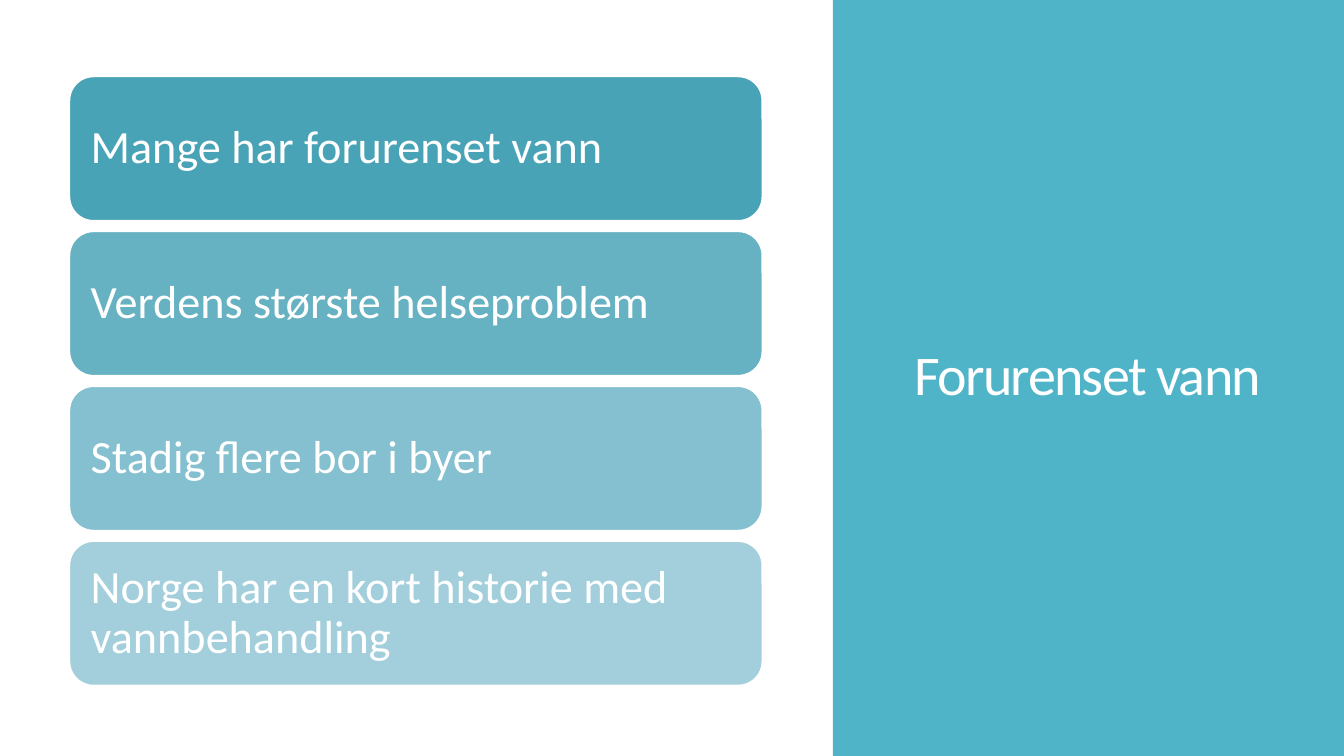
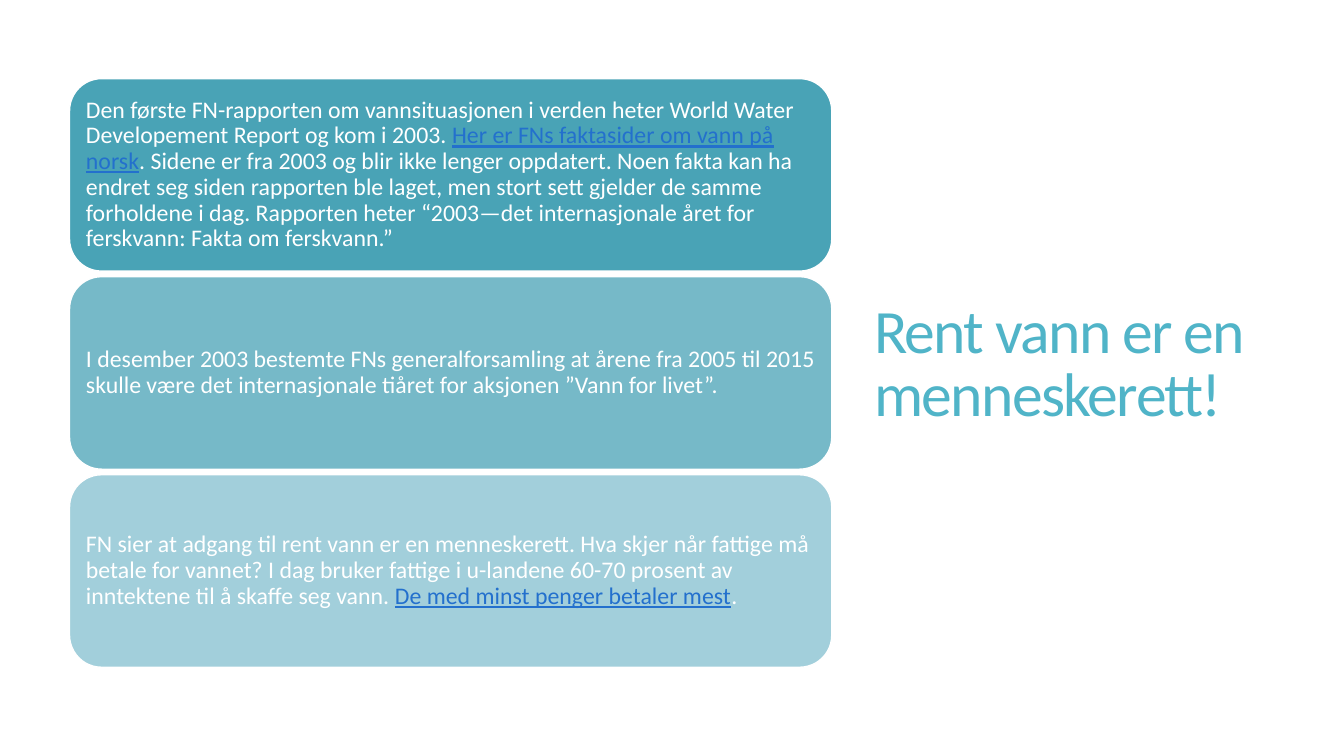
"""Build two slides about clean water, each with a stack of cards and a side title."""
from dataclasses import dataclass

import pptx
import pptx.dml.color
import pptx.enum.shapes
import pptx.enum.text
import pptx.presentation
import pptx.shapes.autoshape
import pptx.slide
import pptx.text.text
import pptx.util

Inches = pptx.util.Inches
RGBColor = pptx.dml.color.RGBColor
MSO_SHAPE = pptx.enum.shapes.MSO_SHAPE

FONT = "Calibri"
WHITE = RGBColor(0xFF, 0xFF, 0xFF)
TEAL = RGBColor(0x50, 0xB4, 0xC8)
CARD_DARK = RGBColor(0x49, 0xA3, 0xB6)
CARD_LIGHT = RGBColor(0xA2, 0xCF, 0xDB)
LINK_BLUE = RGBColor(0x23, 0x70, 0xCD)
CARD_LEFT = 0.69


@dataclass(frozen=True)
class Run:
    text: str
    linked: bool = False


@dataclass(frozen=True)
class Title:
    text: str
    left: float
    top: float
    width: float
    height: float
    size: int
    color: RGBColor


@dataclass(frozen=True)
class CardStack:
    cards: list[list[Run]]
    top: float
    bottom: float
    width: float
    height: float
    size: int
    inset: float


def blend(start: RGBColor, end: RGBColor, share: float) -> RGBColor:
    """Return the colour at the given share of the way from start to end."""
    return RGBColor(*(round(a + (b - a) * share) for a, b in zip(start, end)))


def add_run(p: pptx.text.text._Paragraph, text: str, size: int,
            color: RGBColor) -> pptx.text.text._Run:
    """Append a run in the shared font."""
    r = p.add_run()
    r.text = text
    r.font.name = FONT
    r.font.size = pptx.util.Pt(size)
    r.font.color.rgb = color
    return r


def setup_frame(tf: pptx.text.text.TextFrame, inset: float,
                spacing: float) -> pptx.text.text._Paragraph:
    """Wrap and centre the frame vertically, and return its first paragraph."""
    tf.word_wrap = True
    tf.vertical_anchor = pptx.enum.text.MSO_ANCHOR.MIDDLE
    tf.margin_left = tf.margin_right = tf.margin_top = tf.margin_bottom = Inches(inset)
    p = tf.paragraphs[0]
    p.alignment = pptx.enum.text.PP_ALIGN.LEFT
    p.line_spacing = spacing
    return p


def add_box(s: pptx.slide.Slide, kind: MSO_SHAPE, left: float, top: float, width: float,
            height: float, fill: RGBColor) -> pptx.shapes.autoshape.Shape:
    """Add a flat filled shape without an outline."""
    sp = s.shapes.add_shape(kind, Inches(left), Inches(top), Inches(width), Inches(height))
    sp.shadow.inherit = False
    sp.fill.solid()
    sp.fill.fore_color.rgb = fill
    sp.line.fill.background()
    return sp


def add_title(s: pptx.slide.Slide, title: Title) -> None:
    """Add the tightly spaced title at the side."""
    sp = s.shapes.add_textbox(Inches(title.left), Inches(title.top),
                              Inches(title.width), Inches(title.height))
    p = setup_frame(sp.text_frame, 0.1, 0.85)
    r = add_run(p, title.text, title.size, title.color)
    r.font._element.set("spc", "-120")


def add_cards(s: pptx.slide.Slide, stack: CardStack) -> None:
    """Spread cards evenly from top to bottom, shading from dark to light."""
    steps = len(stack.cards) - 1
    pitch = (stack.bottom - stack.top - stack.height) / steps
    for i, runs in enumerate(stack.cards):
        sp = add_box(s, MSO_SHAPE.ROUNDED_RECTANGLE, CARD_LEFT, stack.top + i * pitch,
                     stack.width, stack.height, blend(CARD_DARK, CARD_LIGHT, i / steps))
        sp.line.color.rgb = WHITE
        sp.line.width = pptx.util.Pt(1)
        p = setup_frame(sp.text_frame, stack.inset, 0.9)
        for run in runs:
            r = add_run(p, run.text, stack.size, LINK_BLUE if run.linked else WHITE)
            r.font.underline = run.linked


def add_slide(prs: pptx.presentation.Presentation, title: Title, stack: CardStack,
              panel: bool = False) -> None:
    """Add a slide with cards on the left and a title on the right."""
    s = prs.slides.add_slide(prs.slide_layouts[6])
    if panel:
        add_box(s, MSO_SHAPE.RECTANGLE, 8.26, 0, 5.07, 7.5, TEAL)
    add_title(s, title)
    add_cards(s, stack)


POLLUTED_WATER = CardStack(
    [
        [Run("Mange har forurenset vann")],
        [Run("Verdens største helseproblem")],
        [Run("Stadig flere bor i byer")],
        [Run("Norge har en kort historie med vannbehandling")],
    ],
    top=0.76, bottom=6.8, width=6.87, height=1.43, size=33, inset=0.14,
)

HUMAN_RIGHT = CardStack(
    [
        [
            Run("Den første FN-rapporten om vannsituasjonen i verden heter World Water "
                "Developement Report og kom i 2003. "),
            Run("Her er FNs faktasider om vann på norsk", linked=True),
            Run(". Sidene er fra 2003 og blir ikke lenger oppdatert. Noen fakta kan ha "
                "endret seg siden rapporten ble laget, men stort sett gjelder de samme "
                "forholdene i dag. Rapporten heter “2003—det internasjonale året for "
                "ferskvann: Fakta om ferskvann.”"),
        ],
        [
            Run("I desember 2003 bestemte FNs generalforsamling at årene fra 2005 til 2015 "
                "skulle være det internasjonale tiåret for aksjonen ”Vann for livet”."),
        ],
        [
            Run("FN sier at adgang til rent vann er en menneskerett. Hva skjer når fattige "
                "må betale for vannet? I dag bruker fattige i u-landene 60-70 prosent av "
                "inntektene til å skaffe seg vann. "),
            Run("De med minst penger betaler mest", linked=True),
            Run("."),
        ],
    ],
    top=0.78, bottom=6.62, width=7.56, height=1.91, size=17, inset=0.07,
)


def main() -> None:
    """Build and save the presentation."""
    prs = pptx.Presentation()
    prs.slide_width = Inches(13.33)
    prs.slide_height = Inches(7.5)
    add_slide(prs, Title("Forurenset vann", 8.97, 0.7, 3.66, 6.11, 40, WHITE),
              POLLUTED_WATER, panel=True)
    add_slide(prs, Title("Rent vann er en menneskerett!", 8.57, 0.55, 4.05, 6.16, 44, TEAL),
              HUMAN_RIGHT)
    prs.save("out.pptx")


if __name__ == "__main__":
    main()
